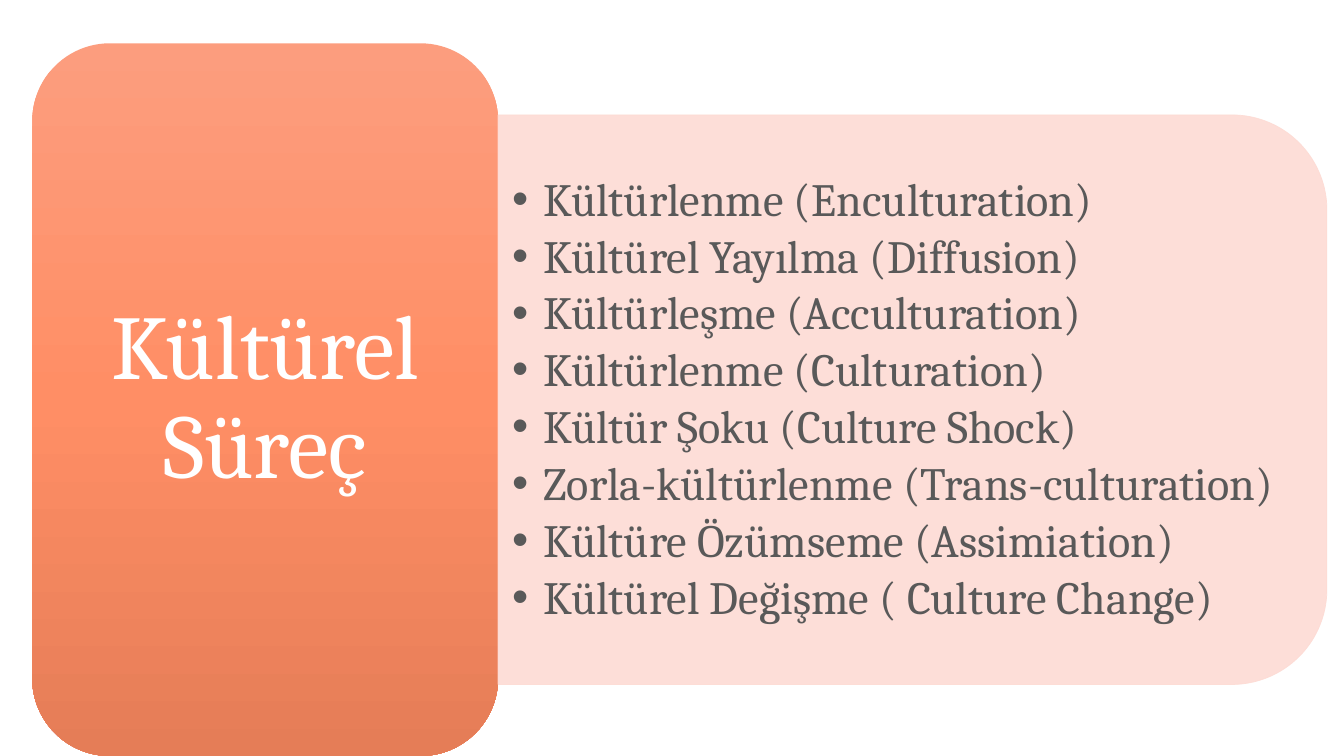
from dataclasses import dataclass

from lxml import etree
from pptx import Presentation
from pptx import util as u
from pptx.dml.color import RGBColor
from pptx.enum import shapes, text
from pptx.oxml.ns import qn


@dataclass(frozen=True)
class Theme:
    font: str = "Cambria"
    title_size: float = 65
    list_size: float = 33
    title_color: str = "FFFFFF"
    list_color: str = "595959"
    panel: str = "FDDBD4"
    panel_opacity: int = 90
    card_stops: tuple = ((0, "FC9D7E"), (50, "FF8E65"), (100, "E57D57"))


@dataclass(frozen=True)
class Box:
    left: float
    top: float
    width: float
    height: float

    def inset(self, horizontal, vertical):
        return Box(self.left + horizontal, self.top + vertical,
                   self.width - 2 * horizontal, self.height - 2 * vertical)

    def lengths(self):
        return [u.Inches(value) for value in (self.left, self.top, self.width, self.height)]


THEME = Theme()
PROCESSES = [
    "Kültürlenme (Enculturation)",
    "Kültürel Yayılma (Diffusion)",
    "Kültürleşme (Acculturation)",
    "Kültürlenme (Culturation)",
    "Kültür Şoku (Culture Shock)",
    "Zorla-kültürlenme (Trans-culturation)",
    "Kültüre Özümseme (Assimiation)",
    "Kültürel Değişme ( Culture Change)",
]


def place_text(placeholder, box, margins, wording):
    placeholder.left, placeholder.top, placeholder.width, placeholder.height = box.lengths()
    frame = placeholder.text_frame
    frame.text = wording
    frame.word_wrap = True
    frame.auto_size = text.MSO_AUTO_SIZE.NONE
    frame.vertical_anchor = text.MSO_ANCHOR.MIDDLE
    frame.margin_left = frame.margin_right = u.Inches(margins[0])
    frame.margin_top = frame.margin_bottom = u.Inches(margins[1])
    return frame.paragraphs


def format_paragraph(paragraph, size, color, alignment, space_after=0):
    paragraph.alignment = alignment
    paragraph.line_spacing = 0.9
    paragraph.space_before = u.Pt(0)
    paragraph.space_after = u.Pt(space_after)
    for run in paragraph.runs:
        run.font.name = THEME.font
        run.font.size = u.Pt(size)
        run.font.color.rgb = RGBColor.from_string(color)


def add_bullet(paragraph, indent):
    properties = paragraph._p.get_or_add_pPr()
    properties.set("marL", str(u.Inches(indent)))
    properties.set("indent", str(-u.Inches(indent)))
    etree.SubElement(properties, qn("a:buChar"), char="•")


def add_backdrop(slide, preset, box, placeholder):
    shape = slide.shapes.add_shape(preset, *box.lengths())
    shape.shadow.inherit = False
    placeholder._element.addprevious(shape._element)
    return shape


def fill_gradient(shape, stops):
    shape.fill.gradient()
    shape.fill.gradient_angle = 270
    stop_list = shape._element.spPr.find(qn("a:gradFill")).find(qn("a:gsLst"))
    for stop in list(stop_list):
        stop_list.remove(stop)
    for position, color in stops:
        stop = etree.SubElement(stop_list, qn("a:gs"), pos=str(position * 1000))
        etree.SubElement(stop, qn("a:srgbClr"), val=color)


def build_process_list(slide, box):
    body = slide.placeholders[1]
    upright = Box(box.left + (box.width - box.height) / 2,
                  box.top + (box.height - box.width) / 2, box.height, box.width)
    panel = add_backdrop(slide, shapes.MSO_SHAPE.ROUND_2_SAME_RECTANGLE, upright, body)
    panel.rotation = 90
    panel.fill.solid()
    panel.fill.fore_color.rgb = RGBColor.from_string(THEME.panel)
    panel.line.color.rgb = RGBColor.from_string(THEME.panel)
    panel.line.width = u.Pt(0.5)
    for color in panel._element.spPr.iter(qn("a:srgbClr")):
        etree.SubElement(color, qn("a:alpha"), val=str(THEME.panel_opacity * 1000))

    text_box = Box(box.left, box.top + 0.28, box.width - 0.28, box.height - 0.55)
    for paragraph in place_text(body, text_box, (0.14, 0.07), "\n".join(PROCESSES)):
        paragraph.level = 1
        add_bullet(paragraph, 0.31)
        format_paragraph(paragraph, THEME.list_size, THEME.list_color,
                         text.PP_ALIGN.LEFT, THEME.list_size * 0.15)


def build_title_card(slide, box):
    title = slide.shapes.title
    card = add_backdrop(slide, shapes.MSO_SHAPE.ROUNDED_RECTANGLE, box, title)
    fill_gradient(card, THEME.card_stops)
    card.line.fill.background()
    for paragraph in place_text(title, box.inset(0.23, 0.23), (0.27, 0.14), "Kültürel Süreç"):
        format_paragraph(paragraph, THEME.title_size, THEME.title_color, text.PP_ALIGN.CENTER)


def main():
    presentation = Presentation()
    presentation.slide_width = u.Inches(13.33)
    presentation.slide_height = u.Inches(7.5)
    slide = presentation.slides.add_slide(presentation.slide_layouts[1])
    build_process_list(slide, Box(4.94, 1.14, 8.22, 5.65))
    build_title_card(slide, Box(0.32, 0.43, 4.62, 7.07))
    presentation.save("out.pptx")


if __name__ == "__main__":
    main()
